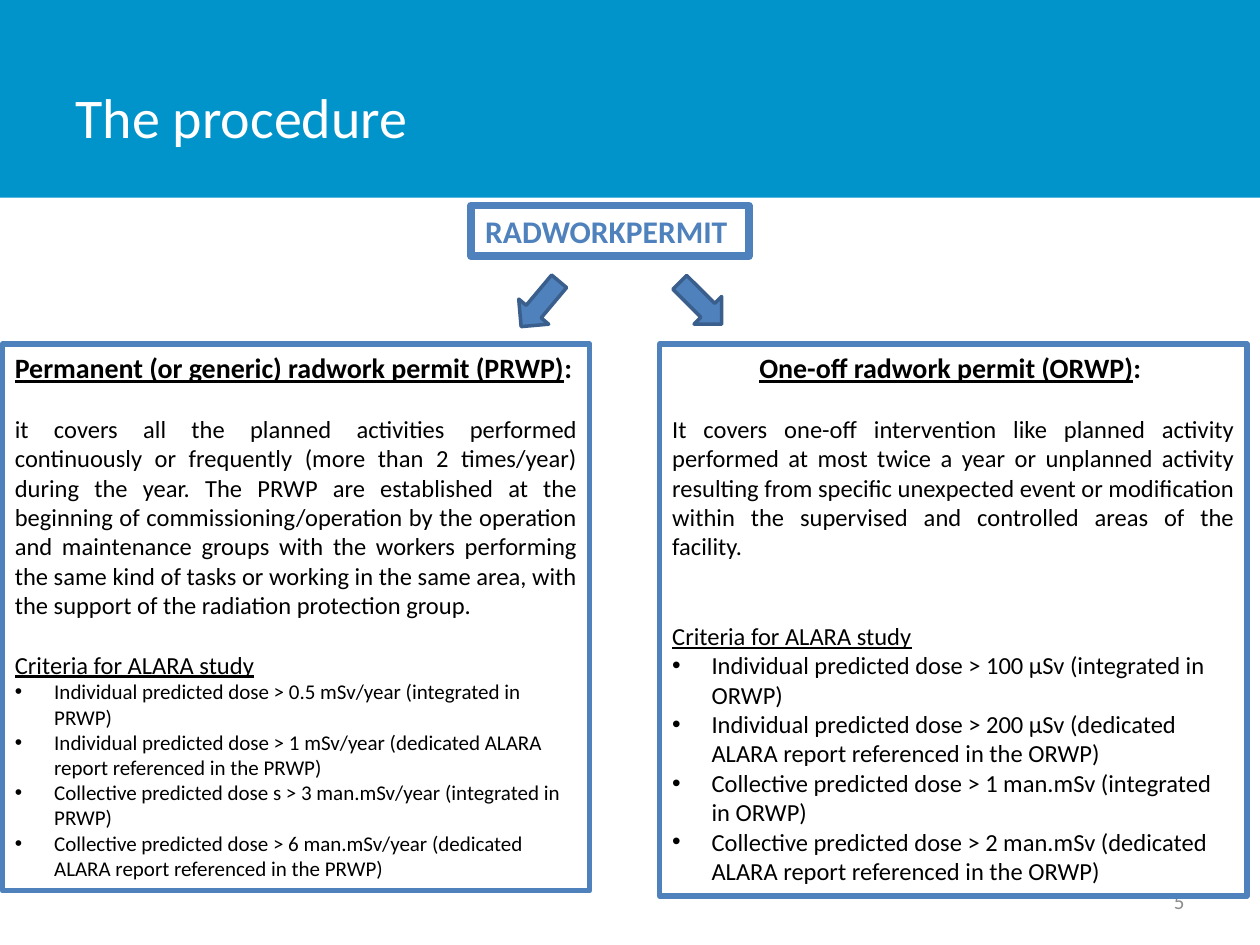
from lxml.etree import SubElement as Sub
from pptx import Presentation
from pptx.dml.color import RGBColor as RGB
from pptx.enum.shapes import MSO_SHAPE as Kind
from pptx.enum.text import MSO_ANCHOR as Anchor, PP_ALIGN as Align
from pptx.oxml.ns import qn
from pptx.util import Pt

BLUE = "4F81BD"
GAP = 17.1  # one 14 pt line
HEAD = {"size": Pt(16), "bold": True}
LEAD = {"size": Pt(14), "underline": True}

# heading, its tail and alignment, body, gap before criteria, bullet size, bullets
LEFT = (
    "Permanent (or generic) radwork permit (PRWP)", ":", Align.LEFT,
    "it covers all the planned activities performed continuously or frequently "
    "(more than 2 times/year) during the year. The PRWP are established at the "
    "beginning of commissioning/operation by the operation and maintenance groups "
    "with the workers performing the same kind of tasks or working in the same "
    "area, with the support of the radiation protection group. ",
    GAP, 12,
    ["Individual predicted dose > 0.5 mSv/year (integrated in PRWP)",
     "Individual predicted dose > 1 mSv/year (dedicated ALARA report referenced in the PRWP)",
     "Collective predicted dose s > 3 man.mSv/year (integrated in PRWP)",
     "Collective predicted dose > 6 man.mSv/year (dedicated ALARA report referenced in the PRWP)"],
)
RIGHT = (
    "One-off radwork permit (ORWP)", ": ", Align.CENTER,
    "It covers one-off intervention like planned activity performed at most twice "
    "a year or unplanned activity resulting from specific unexpected event or "
    "modification within the supervised and controlled areas of the facility.",
    2 * GAP, 14,
    ["Individual predicted dose > 100 μSv (integrated in ORWP)",
     "Individual predicted dose > 200 μSv (dedicated ALARA report referenced in the ORWP)",
     "Collective predicted dose > 1 man.mSv (integrated in ORWP)",
     "Collective predicted dose > 2 man.mSv (dedicated ALARA report referenced in the ORWP)"],
)


def hue(code):
    return RGB.from_string(code)


def style(font, form, color="000000"):
    for key, val in {"name": "Calibri", **form}.items():
        setattr(font, key, val)
    font.color.rgb = hue(color)


def write(par, text, form, color="000000", align=Align.LEFT, before=0):
    par.alignment = align
    par.space_before = Pt(before)
    run = par.add_run()
    run.text = text
    style(run.font, form, color)


def shape(slide, kind, at, fill=None, line=None, width=0):
    item = slide.shapes.add_shape(kind, *map(Pt, at))
    item.shadow.inherit = False
    if fill:
        item.fill.solid()
        item.fill.fore_color.rgb = hue(fill)
    else:
        item.fill.background()
    if line:
        item.line.color.rgb = hue(line)
        item.line.width = Pt(width)
    else:
        item.line.fill.background()
    item.text_frame.vertical_anchor = Anchor.TOP
    return item


def bullet(par):
    props = par._p.get_or_add_pPr()
    props.set("marL", str(Pt(22.5)))
    props.set("indent", str(-Pt(22.5)))
    Sub(props, qn("a:buFont")).set("typeface", "Arial")
    Sub(props, qn("a:buChar")).set("char", "•")


def panel(slide, at, data):
    head, tail, align, body, gap, size, points = data
    frame = shape(slide, Kind.RECTANGLE, at, line=BLUE, width=3).text_frame
    top = frame.paragraphs[0]
    write(top, head, {**HEAD, "underline": True}, align=align)
    write(top, tail, HEAD, align=align)
    write(frame.add_paragraph(), body, {"size": Pt(14)},
          align=Align.JUSTIFY, before=GAP)
    write(frame.add_paragraph(), "Criteria for ALARA study", LEAD,
          align=Align.JUSTIFY, before=gap)
    for point in points:
        par = frame.add_paragraph()
        write(par, point, {"size": Pt(size)})
        bullet(par)


def header(slide):
    band = shape(slide, Kind.RECTANGLE, (0, 0, 720, 113), "0094CA")
    title = slide.shapes.title
    title.element.addprevious(band.element)
    place = {"left": 36, "top": 21.6, "width": 562.3, "height": 90}
    for key, val in place.items():
        setattr(title, key, Pt(val))
    title.text_frame.vertical_anchor = Anchor.MIDDLE
    write(title.text_frame.paragraphs[0], "The procedure", {"size": Pt(32)}, "FFFFFF")


def number(slide):
    box = slide.shapes.add_textbox(*map(Pt, (516, 500.5, 168, 28.75)))
    box.text_frame.word_wrap = True
    box.text_frame.vertical_anchor = Anchor.MIDDLE
    write(box.text_frame.paragraphs[0], "5", {"size": Pt(12)}, "8C8C8C", Align.RIGHT)


def main():
    deck = Presentation()
    deck.slide_width, deck.slide_height = Pt(720), Pt(540)
    slide = deck.slides.add_slide(deck.slide_layouts[5])
    header(slide)
    number(slide)

    # Root of the tree
    root = shape(slide, Kind.RECTANGLE, (269.2, 117.4, 158.6, 29.1), line=BLUE, width=4.5)
    write(root.text_frame.paragraphs[0], "RADWORKPERMIT ",
          {"size": Pt(18), "bold": True}, BLUE, Align.CENTER)

    # Two kinds of permit
    panel(slide, (1.4, 196.6, 335.6, 312.5), LEFT)
    panel(slide, (377, 196.6, 335.6, 315.4), RIGHT)

    # Arrows to the permits
    for left, top, turn in ((297.5, 156.8, 40), (389.3, 156.4, 314.9)):
        arrow = shape(slide, Kind.DOWN_ARROW, (left, top, 22.3, 33.8), BLUE, "3A5F8C", 2)
        arrow.rotation = turn

    deck.save("out.pptx")


if __name__ == "__main__":
    main()
